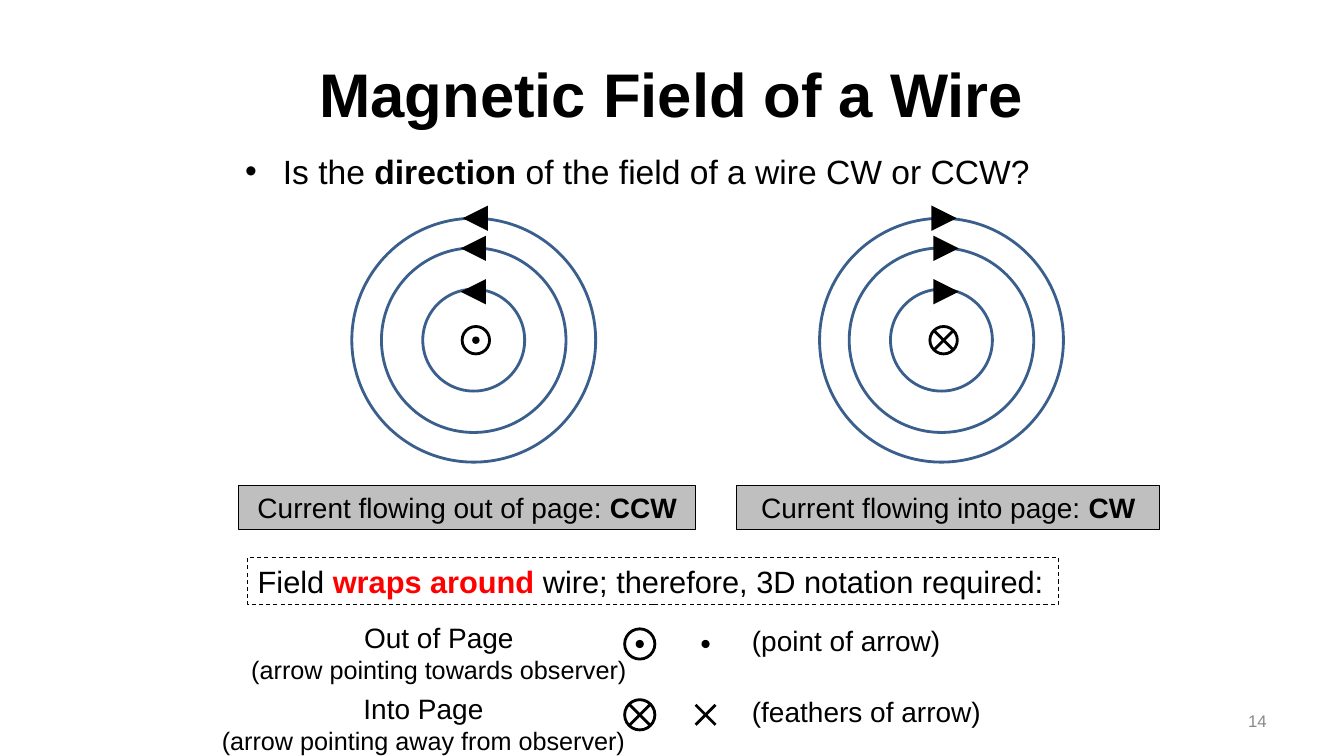
from dataclasses import dataclass

from lxml.etree import SubElement
from pptx import Presentation
from pptx.dml.color import RGBColor
from pptx.enum.dml import MSO_LINE
from pptx.enum.shapes import MSO_CONNECTOR, MSO_SHAPE
from pptx.enum.text import MSO_ANCHOR, MSO_AUTO_SIZE, PP_ALIGN
from pptx.oxml.ns import qn
from pptx.util import Pt


@dataclass(frozen=True)
class Theme:
    font: str = "Arial"
    ink: RGBColor = RGBColor(0, 0, 0)
    accent: RGBColor = RGBColor(0xFF, 0, 0)
    field: RGBColor = RGBColor(0x3A, 0x5F, 0x8C)
    panel: RGBColor = RGBColor(0xBF, 0xBF, 0xBF)
    muted: RGBColor = RGBColor(0x89, 0x89, 0x89)
    title: int = 44
    body: int = 24
    note: int = 22
    label: int = 20
    detail: int = 18
    number: int = 12
    thin: float = 0.75
    stroke: float = 2
    arrow: float = 6


THEME = Theme()
# Each ring: radius, arrow tip distance from the wire axis, arrow drop below the ring top
RINGS = ((36.4, 10.8, 1.8), (65.9, 10.8, 0.3), (87.1, 9.4, 0))
DOT_RATIO, CROSS_RATIO = 0.27, 0.66


# Text
def write_paragraph(paragraph, text, size, align=PP_ALIGN.LEFT, color=THEME.ink,
                    strong="", strong_color=None):
    """Write one paragraph; the words given as strong are set bold."""
    before, _, after = text.partition(strong) if strong else (text, "", "")
    paragraph.alignment = align
    for part in (before, strong, after):
        if part:
            run = paragraph.add_run()
            run.text = part
            run.font.name = THEME.font
            run.font.size = Pt(size)
            run.font.bold = part == strong
            run.font.color.rgb = strong_color if part == strong and strong_color else color


def add_text(slide, box, lines, align=PP_ALIGN.LEFT, anchor=MSO_ANCHOR.TOP, color=THEME.ink):
    frame = slide.shapes.add_textbox(*map(Pt, box)).text_frame
    frame.word_wrap = True
    frame.vertical_anchor = anchor
    for index, (text, size) in enumerate(lines):
        paragraph = frame.add_paragraph() if index else frame.paragraphs[0]
        write_paragraph(paragraph, text, size, align, color)


def add_panel(slide, box, text, size, strong, align, fill=None, dash=None, strong_color=None):
    shape = slide.shapes.add_shape(MSO_SHAPE.RECTANGLE, *map(Pt, box))
    shape.shadow.inherit = False
    if fill:
        shape.fill.solid()
        shape.fill.fore_color.rgb = fill
    else:
        shape.fill.background()
    shape.line.color.rgb = THEME.ink
    shape.line.width = Pt(THEME.thin)
    if dash:
        shape.line.dash_style = dash
    shape.text_frame.word_wrap = True
    write_paragraph(shape.text_frame.paragraphs[0], text, size, align,
                    strong=strong, strong_color=strong_color)


# Drawing marks
def add_circle(slide, x, y, diameter, line=None, fill=None):
    shape = slide.shapes.add_shape(MSO_SHAPE.OVAL, Pt(x - diameter / 2), Pt(y - diameter / 2),
                                   Pt(diameter), Pt(diameter))
    shape.shadow.inherit = False
    if fill:
        shape.fill.solid()
        shape.fill.fore_color.rgb = fill
    else:
        shape.fill.background()
    if line:
        shape.line.color.rgb = line
        shape.line.width = Pt(THEME.stroke)
    else:
        shape.line.fill.background()


def add_line(slide, start, end, width, arrow=False):
    line = slide.shapes.add_connector(MSO_CONNECTOR.STRAIGHT, *map(Pt, start + end))
    line.line.color.rgb = THEME.ink
    line.line.width = Pt(width)
    if arrow:
        SubElement(line.line._get_or_add_ln(), qn("a:tailEnd"), type="triangle")
    SubElement(line._element.spPr, qn("a:effectLst"))


def add_dot(slide, x, y, size):
    add_circle(slide, x, y, size * DOT_RATIO, fill=THEME.ink)


def add_cross(slide, x, y, size):
    half = size * CROSS_RATIO / 2
    for rise in (half, -half):
        add_line(slide, (x + half, y - rise), (x - half, y + rise), THEME.stroke)


def add_circled(slide, add_mark, x, y, size):
    add_circle(slide, x, y, size, line=THEME.ink)
    add_mark(slide, x, y, size)


# Regions
def build_title(slide, box):
    title = slide.shapes.title
    title.left, title.top, title.width, title.height = map(Pt, box)
    frame = title.text_frame
    frame.text = "Magnetic Field of a Wire"
    frame.auto_size = MSO_AUTO_SIZE.NONE
    frame.vertical_anchor = MSO_ANCHOR.MIDDLE
    frame.paragraphs[0].alignment = PP_ALIGN.CENTER
    font = frame.paragraphs[0].runs[0].font
    font.name, font.size, font.bold = THEME.font, Pt(THEME.title), True
    font.color.rgb = THEME.ink


def build_question(slide, box):
    frame = slide.shapes.add_textbox(*map(Pt, box)).text_frame
    frame.word_wrap = True
    paragraph = frame.paragraphs[0]
    write_paragraph(paragraph, "Is the direction of the field of a wire CW or CCW?",
                    THEME.body, strong="direction")
    properties = paragraph._p.get_or_add_pPr()
    properties.set("marL", str(Pt(27)))
    properties.set("indent", str(Pt(-27)))
    SubElement(properties, qn("a:buFont"), typeface=THEME.font)
    SubElement(properties, qn("a:buChar"), char="•")


def build_field(slide, box, add_mark, direction):
    """Field rings round a wire; direction is -1 for arrows to the left, 1 to the right."""
    left, top, width, height = box
    x, y = left + width / 2, top + height / 2
    axis = x + 1.5
    add_circled(slide, add_mark, axis, y, 19.6)
    for radius, _, _ in RINGS:
        add_circle(slide, x, y, radius * 2, line=THEME.field)
    for radius, reach, drop in RINGS:
        tip, level = axis + direction * reach, y - radius + drop
        add_line(slide, (tip - direction * 9, level), (tip, level), THEME.arrow, arrow=True)


def build_legend_row(slide, box, add_mark, name, detail, meaning):
    left, top, width, height = box
    middle = top + 20
    label_width = width * 2 / 3
    center = 313.5 if add_mark is add_dot else 302.5
    add_text(slide, (center - label_width / 2, top, label_width, height),
             ((name, THEME.label), (detail, THEME.detail)), PP_ALIGN.CENTER)
    add_circled(slide, add_mark, left + 307, middle, 21.6)
    add_mark(slide, left + 354, middle, 21.6)
    add_text(slide, (left + 380, top + 2, 217, 32), ((meaning, THEME.label),))


def build_slide(presentation):
    slide = presentation.slides.add_slide(presentation.slide_layouts[5])
    build_title(slide, (48, 21.6, 864, 90))
    build_question(slide, (168, 104, 648, 36))

    # Field diagrams and captions
    build_field(slide, (251.3, 155.9, 174.2, 174.2), add_dot, -1)
    build_field(slide, (585.4, 155.9, 174.2, 174.2), add_cross, 1)
    for box, text, strong in (
        ((170.7, 346.5, 326, 31.5), "Current flowing out of page: CCW", "CCW"),
        ((526.3, 346.5, 302, 31.5), "Current flowing into page: CW", "CW"),
    ):
        add_panel(slide, box, text, THEME.label, strong, PP_ALIGN.CENTER, fill=THEME.panel)

    # Notation
    add_panel(slide, (177, 398, 579, 34), "Field wraps around wire; therefore, 3D notation required:",
              THEME.note, "wraps around", PP_ALIGN.LEFT, dash=MSO_LINE.DASH,
              strong_color=THEME.accent)
    rows = (
        (add_dot, "Out of Page", "(arrow pointing towards observer)", "(point of arrow)"),
        (add_cross, "Into Page", "(arrow pointing away from observer)", "(feathers of arrow)"),
    )
    for index, row in enumerate(rows):
        build_legend_row(slide, (150, 440 + index * 50.6, 460, 53), *row)

    add_text(slide, (688, 500.5, 224, 28.8), (("14", THEME.number),),
             PP_ALIGN.RIGHT, MSO_ANCHOR.MIDDLE, THEME.muted)


def main():
    presentation = Presentation()
    presentation.slide_width, presentation.slide_height = Pt(960), Pt(540)
    build_slide(presentation)
    presentation.save("out.pptx")


if __name__ == "__main__":
    main()
